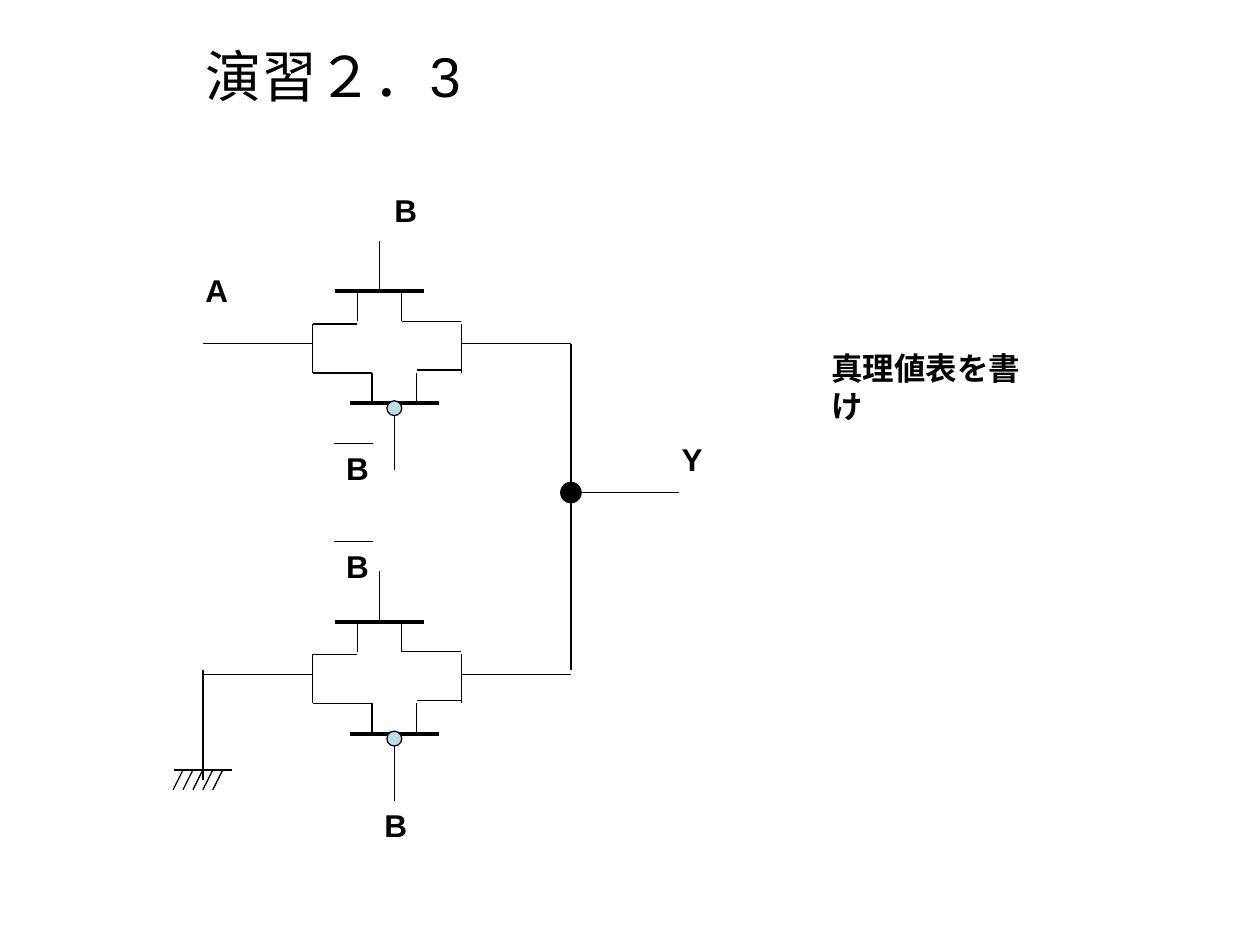
import pptx
import pptx.dml.color
import pptx.enum.shapes
import pptx.enum.text
import pptx.oxml.ns
import pptx.util
from lxml import etree

Cm = pptx.util.Cm
Pt = pptx.util.Pt
BLACK = "000000"
BUBBLE = "BBE0E3"

LEFT_X, RIGHT_X = 6.3, 9.3      # sides of each transmission gate
INPUT_X, OUTPUT_X = 4.09, 11.51
UPPER_Y, LOWER_Y = 6.93, 13.59  # wire heights of the two gates
Y_NODE = 9.93


def rgb(hex_color):
    return pptx.dml.color.RGBColor.from_string(hex_color)


def add_line(s, x1, y1, x2, y2, width=0.75):
    line = s.shapes.add_connector(
        pptx.enum.shapes.MSO_CONNECTOR.STRAIGHT, Cm(x1), Cm(y1), Cm(x2), Cm(y2))
    line.line.color.rgb = rgb(BLACK)
    line.line.width = Pt(width)
    etree.SubElement(line._element.spPr, pptx.oxml.ns.qn("a:effectLst"))


def add_circle(s, cx, cy, diameter, fill, width):
    sp = s.shapes.add_shape(
        pptx.enum.shapes.MSO_SHAPE.OVAL, Cm(cx - diameter / 2),
        Cm(cy - diameter / 2), Cm(diameter), Cm(diameter))
    sp.shadow.inherit = False
    sp.fill.solid()
    sp.fill.fore_color.rgb = rgb(fill)
    sp.line.color.rgb = rgb(BLACK)
    sp.line.width = Pt(width)


def add_text(s, text, x, y, w=0.97, h=1.02, size=18, bold=True, wrap=False):
    tf = s.shapes.add_textbox(Cm(x), Cm(y), Cm(w), Cm(h)).text_frame
    tf.word_wrap = wrap
    tf.vertical_anchor = pptx.enum.text.MSO_ANCHOR.TOP
    r = tf.paragraphs[0].add_run()
    r.text = text
    r.font.name = "Arial"
    r.font.size = Pt(size)
    r.font.bold = bold
    r.font.color.rgb = rgb(BLACK)


def add_negated(s, text, x, y):
    """Label with a bar above it."""
    add_text(s, text, x, y)
    add_line(s, x, y + 0.02, x + 0.79, y + 0.02)


def add_transistor(s, center, bar_y, leg_y, left_y, right_y):
    """Gate bar, two legs, and the links from the legs to the gate's sides."""
    add_line(s, center - 0.9, bar_y, center + 0.9, bar_y, 2.25)
    for x, side_x, link_y in ((center - 0.45, LEFT_X, left_y),
                              (center + 0.45, RIGHT_X, right_y)):
        add_line(s, x, bar_y, x, leg_y)
        add_line(s, x, link_y, side_x, link_y)


def add_transmission_gate(s, y):
    """Upper nMOS and lower pMOS in parallel around the wire at height y."""
    n_x, p_x = 7.65, 7.95
    add_transistor(s, n_x, y - 1.06, y - 0.45, y - 0.4, y - 0.45)
    add_line(s, n_x, y - 1.06, n_x, y - 2.07)
    add_transistor(s, p_x, y + 1.2, y + 0.59, y + 0.59, y + 0.53)
    add_circle(s, p_x, y + 1.3, 0.3, BUBBLE, 0.75)
    add_line(s, p_x, y + 1.45, p_x, y + 2.55)
    for x in (LEFT_X, RIGHT_X):
        add_line(s, x, y - 0.4, x, y + 0.59)
    add_line(s, INPUT_X, y, LEFT_X, y)
    add_line(s, RIGHT_X, y, OUTPUT_X, y)


def add_ground(s, x, y):
    add_line(s, x, LOWER_Y - 0.08, x, y + 0.2)
    add_line(s, x - 0.59, y, x + 0.59, y)
    for i in range(-2, 3):
        top = x + 0.2 * i
        add_line(s, top, y, top - 0.2, y + 0.4)


def main():
    prs = pptx.Presentation()
    prs.slide_width, prs.slide_height = Cm(25.4), Cm(19.05)
    s = prs.slides.add_slide(prs.slide_layouts[6])

    add_text(s, "演習２．3", 3.89, 0.71, 22.86, 1.88, size=32, bold=False, wrap=True)
    add_text(s, "真理値表を書け", 16.51, 6.91, 4.83, wrap=True)

    for y in (UPPER_Y, LOWER_Y):
        add_transmission_gate(s, y)
    add_ground(s, INPUT_X, 15.52)

    add_line(s, OUTPUT_X, UPPER_Y, OUTPUT_X, LOWER_Y - 0.08)
    add_line(s, OUTPUT_X, Y_NODE, 13.69, Y_NODE)
    add_circle(s, OUTPUT_X, Y_NODE, 0.4, BLACK, 1)

    for text, x, y in (("A", 3.89, 5.33), ("B", 7.7, 3.73),
                       ("B", 7.5, 16.13), ("Y", 13.49, 8.74)):
        add_text(s, text, x, y)
    for y in (8.92, 10.9):
        add_negated(s, "B", 6.73, y)

    prs.save("out.pptx")


if __name__ == "__main__":
    main()
